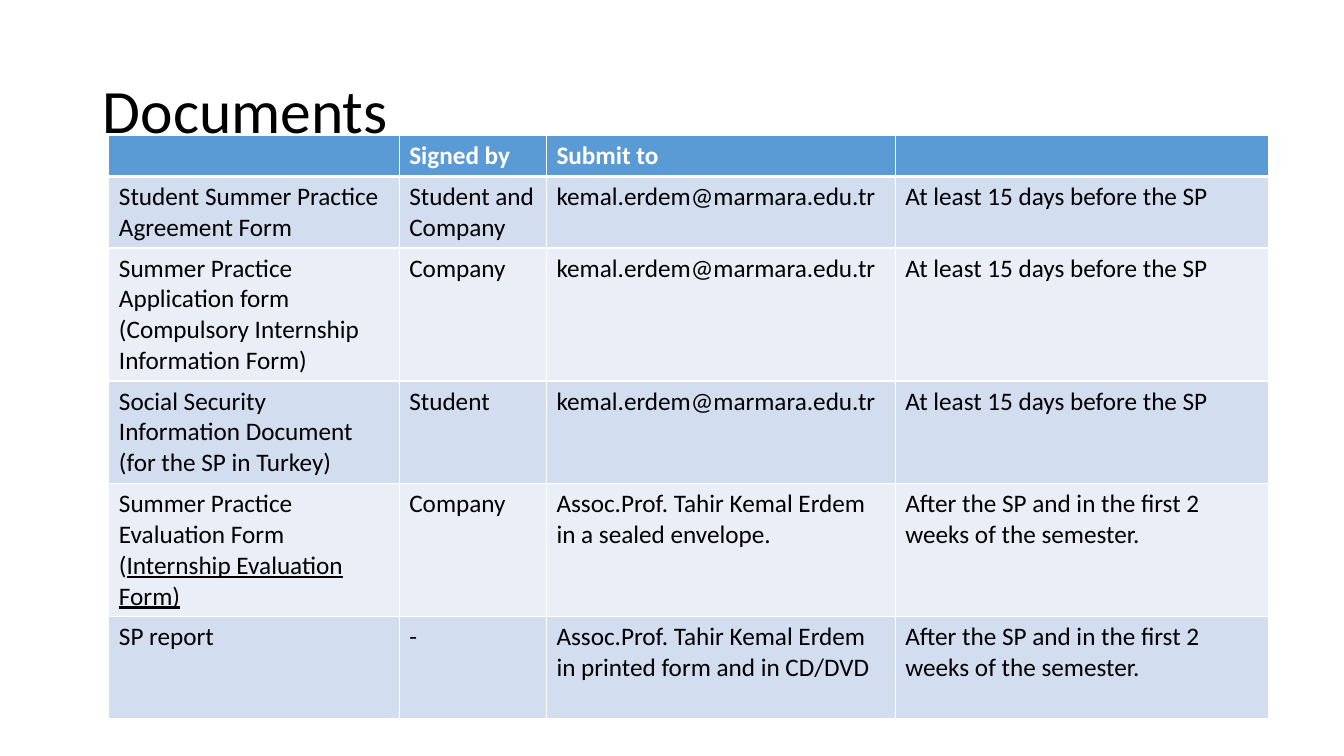
import pptx
import pptx.util
import pptx.dml.color
import pptx.enum.text
from lxml import etree
from pptx.oxml.ns import qn
from pptx.util import Inches, Pt

TITLE = "Documents"
FONT = "Calibri"
BLACK, WHITE = "000000", "FFFFFF"
HEADER_FILL = "5B9BD5"
BAND_FILLS = ["EAEFF7", "D2DEEF"]

EMAIL = "kemal.erdem@marmara.edu.tr"
BEFORE = "At least 15 days before the SP"
AFTER = "After the SP and in the first 2 weeks of the semester."

# A tuple holds a plain run followed by an underlined run.
ROWS = [
    ["", "Signed by", "Submit to", ""],
    ["Student Summer Practice Agreement Form", "Student and Company", EMAIL, BEFORE],
    ["Summer Practice Application form (Compulsory Internship Information Form)",
     "Company", EMAIL, BEFORE],
    ["Social Security Information Document (for the SP in Turkey)",
     "Student", EMAIL, BEFORE],
    [("Summer Practice Evaluation Form (", "Internship Evaluation Form)"),
     "Company", "Assoc.Prof. Tahir Kemal Erdem in a sealed envelope.", AFTER],
    ["SP report", "-",
     "Assoc.Prof. Tahir Kemal Erdem in printed form and in CD/DVD", AFTER],
]
COL_WIDTHS = [2.88, 1.46, 3.46, 3.7]
ROW_HEIGHTS = [0.41, 0.71, 1.32, 1.02, 1.32, 1.01]


def rgb(color):
    return pptx.dml.color.RGBColor.from_string(color)


def set_font(p, size, color, bold=False):
    p.font.name = FONT
    p.font.size = Pt(size)
    p.font.bold = bold
    p.font.color.rgb = rgb(color)


def set_borders(cell, color, widths):
    """Add left, right, top and bottom lines ahead of the cell's fill."""
    tcPr = cell._tc.get_or_add_tcPr()
    for i, (side, width) in enumerate(zip("LRTB", widths)):
        ln = etree.Element(qn(f"a:ln{side}"), w=str(Pt(width)))
        fill = etree.SubElement(ln, qn("a:solidFill"))
        etree.SubElement(fill, qn("a:srgbClr"), val=color)
        tcPr.insert(i, ln)


def add_title(s):
    box = s.shapes.add_textbox(Inches(0.92), Inches(0.4), Inches(11.5), Inches(1.45))
    tf = box.text_frame
    tf.word_wrap = True
    tf.vertical_anchor = pptx.enum.text.MSO_ANCHOR.MIDDLE
    p = tf.paragraphs[0]
    p.text = TITLE
    p.line_spacing = 0.9
    set_font(p, 44, BLACK)


def fill_cell(cell, content, row):
    header = row == 0
    cell.fill.solid()
    cell.fill.fore_color.rgb = rgb(HEADER_FILL if header else BAND_FILLS[row % 2])
    top = 3 if row == 1 else 1
    set_borders(cell, WHITE, [1, 1, top, 3 if header else 1])
    p = cell.text_frame.paragraphs[0]
    set_font(p, 18, WHITE if header else BLACK, header)
    if isinstance(content, tuple):
        for text, underlined in zip(content, (False, True)):
            r = p.add_run()
            r.text = text
            r.font.underline = underlined
    elif content:
        p.text = content


def add_documents_table(s):
    frame = s.shapes.add_table(len(ROWS), len(COL_WIDTHS), Inches(1.08), Inches(1.34),
                               Inches(sum(COL_WIDTHS)), Inches(sum(ROW_HEIGHTS)))
    table = frame.table
    for column, width in zip(table.columns, COL_WIDTHS):
        column.width = Inches(width)
    for i, (height, contents) in enumerate(zip(ROW_HEIGHTS, ROWS)):
        table.rows[i].height = Inches(height)
        for j, content in enumerate(contents):
            fill_cell(table.cell(i, j), content, i)


def main():
    prs = pptx.Presentation()
    prs.slide_width, prs.slide_height = Inches(13.33), Inches(7.5)
    s = prs.slides.add_slide(prs.slide_layouts[6])
    add_title(s)
    add_documents_table(s)
    prs.save("out.pptx")


if __name__ == "__main__":
    main()
